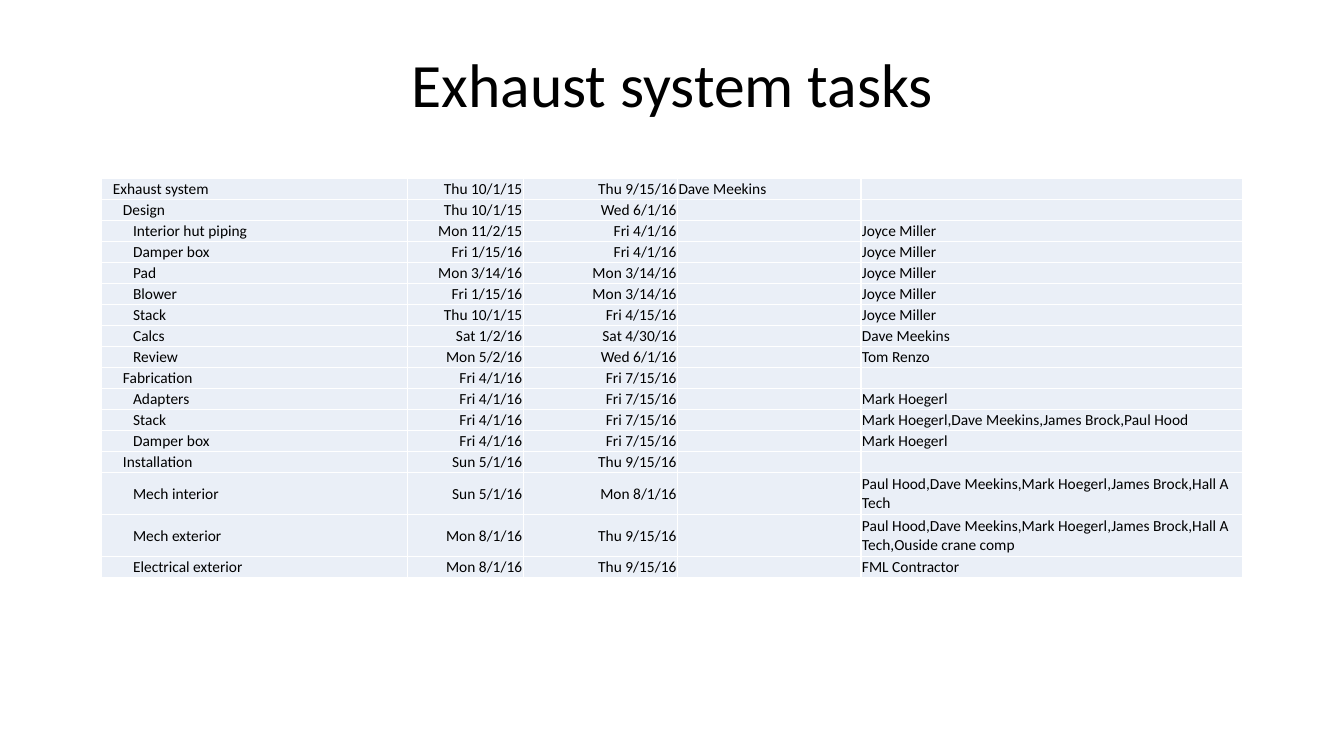
from lxml import etree
from pptx import Presentation
from pptx.dml.color import RGBColor
from pptx.enum.text import MSO_ANCHOR, PP_ALIGN
from pptx.oxml.ns import qn
from pptx.util import Inches, Pt

LEFT, CENTER, RIGHT = PP_ALIGN.LEFT, PP_ALIGN.CENTER, PP_ALIGN.RIGHT
MIDDLE = MSO_ANCHOR.MIDDLE

BLACK = RGBColor(0x00, 0x00, 0x00)
WHITE = RGBColor(0xFF, 0xFF, 0xFF)
PALE_BLUE = RGBColor(0xEA, 0xEF, 0xF7)

COLUMN_WIDTHS = [3.03, 1.15, 1.53, 1.82, 3.78]
COLUMN_ALIGNMENTS = [LEFT, RIGHT, RIGHT, LEFT, LEFT]
TABLE_HEIGHT = 3.96
INDENT_STEP = 0.1

CREW = "Paul Hood,Dave Meekins,Mark Hoegerl,James Brock,Hall A Tech"

# Outline level, task, start, finish, lead, assigned people
TASKS = [
    (1, "Exhaust system", "Thu 10/1/15", "Thu 9/15/16", "Dave Meekins", ""),
    (2, "Design", "Thu 10/1/15", "Wed 6/1/16", "", ""),
    (3, "Interior hut piping", "Mon 11/2/15", "Fri 4/1/16", "", "Joyce Miller"),
    (3, "Damper box", "Fri 1/15/16", "Fri 4/1/16", "", "Joyce Miller"),
    (3, "Pad", "Mon 3/14/16", "Mon 3/14/16", "", "Joyce Miller"),
    (3, "Blower", "Fri 1/15/16", "Mon 3/14/16", "", "Joyce Miller"),
    (3, "Stack", "Thu 10/1/15", "Fri 4/15/16", "", "Joyce Miller"),
    (3, "Calcs", "Sat 1/2/16", "Sat 4/30/16", "", "Dave Meekins"),
    (3, "Review", "Mon 5/2/16", "Wed 6/1/16", "", "Tom Renzo"),
    (2, "Fabrication", "Fri 4/1/16", "Fri 7/15/16", "", ""),
    (3, "Adapters", "Fri 4/1/16", "Fri 7/15/16", "", "Mark Hoegerl"),
    (3, "Stack", "Fri 4/1/16", "Fri 7/15/16", "",
     "Mark Hoegerl,Dave Meekins,James Brock,Paul Hood"),
    (3, "Damper box", "Fri 4/1/16", "Fri 7/15/16", "", "Mark Hoegerl"),
    (2, "Installation", "Sun 5/1/16", "Thu 9/15/16", "", ""),
    (3, "Mech interior", "Sun 5/1/16", "Mon 8/1/16", "", CREW),
    (3, "Mech exterior", "Mon 8/1/16", "Thu 9/15/16", "", CREW + ",Ouside crane comp"),
    (3, "Electrical exterior", "Mon 8/1/16", "Thu 9/15/16", "", "FML Contractor"),
]


class SlideBuilder:
    font_name = "Calibri"
    title_size = Pt(44)
    cell_size = Pt(11)
    border_width = Pt(1)

    def __init__(self, slide):
        self.slide = slide

    def add_run(self, paragraph, text, size):
        run = paragraph.add_run()
        run.text = text
        run.font.name = self.font_name
        run.font.size = size
        run.font.color.rgb = BLACK

    def add_title(self, text, left, top, width, height):
        box = self.slide.shapes.add_textbox(
            Inches(left), Inches(top), Inches(width), Inches(height))
        frame = box.text_frame
        frame.word_wrap = True
        frame.vertical_anchor = MIDDLE
        paragraph = frame.paragraphs[0]
        paragraph.alignment = CENTER
        paragraph.line_spacing = 0.9
        self.add_run(paragraph, text, self.title_size)

    def add_borders(self, cell):
        properties = cell._tc.get_or_add_tcPr()
        for side in ("a:lnL", "a:lnR", "a:lnT", "a:lnB"):
            line = etree.SubElement(properties, qn(side), w=str(self.border_width))
            fill = etree.SubElement(line, qn("a:solidFill"))
            etree.SubElement(fill, qn("a:srgbClr"), val=str(WHITE))

    def fill_cell(self, cell, text, alignment, indent):
        self.add_borders(cell)
        cell.fill.solid()
        cell.fill.fore_color.rgb = PALE_BLUE
        cell.vertical_anchor = MIDDLE
        cell.margin_left = Inches(0.01 + indent)
        cell.margin_right = cell.margin_top = Inches(0.01)
        cell.margin_bottom = 0
        paragraph = cell.text_frame.paragraphs[0]
        paragraph.alignment = alignment
        if text:
            self.add_run(paragraph, text, self.cell_size)
        else:
            # Keeps an empty cell from stretching its row
            etree.SubElement(paragraph._p, qn("a:endParaRPr"),
                             sz=str(int(self.cell_size.pt * 100)))

    def add_task_table(self, tasks, left, top):
        # Long lists of people take two lines
        line_counts = [2 if task[-1].startswith(CREW) else 1 for task in tasks]
        line_height = TABLE_HEIGHT / sum(line_counts)
        table = self.slide.shapes.add_table(
            len(tasks), len(COLUMN_WIDTHS), Inches(left), Inches(top),
            Inches(sum(COLUMN_WIDTHS)), Inches(TABLE_HEIGHT)).table
        table.first_row = False
        table.horz_banding = False
        for column, width in zip(table.columns, COLUMN_WIDTHS):
            column.width = Inches(width)
        for row, lines, (level, *texts) in zip(table.rows, line_counts, tasks):
            row.height = Inches(lines * line_height)
            indents = [level * INDENT_STEP, 0, 0, 0, 0]
            for cell, text, alignment, indent in zip(
                    row.cells, texts, COLUMN_ALIGNMENTS, indents):
                self.fill_cell(cell, text, alignment, indent)


def main():
    presentation = Presentation()
    presentation.slide_width = Inches(13.33)
    presentation.slide_height = Inches(7.5)
    slide = presentation.slides.add_slide(presentation.slide_layouts[6])
    builder = SlideBuilder(slide)

    # Title
    builder.add_title("Exhaust system tasks", 0.92, 0.4, 11.5, 0.93)

    # Task schedule
    builder.add_task_table(TASKS, 1.01, 1.77)

    presentation.save("out.pptx")


if __name__ == "__main__":
    main()
